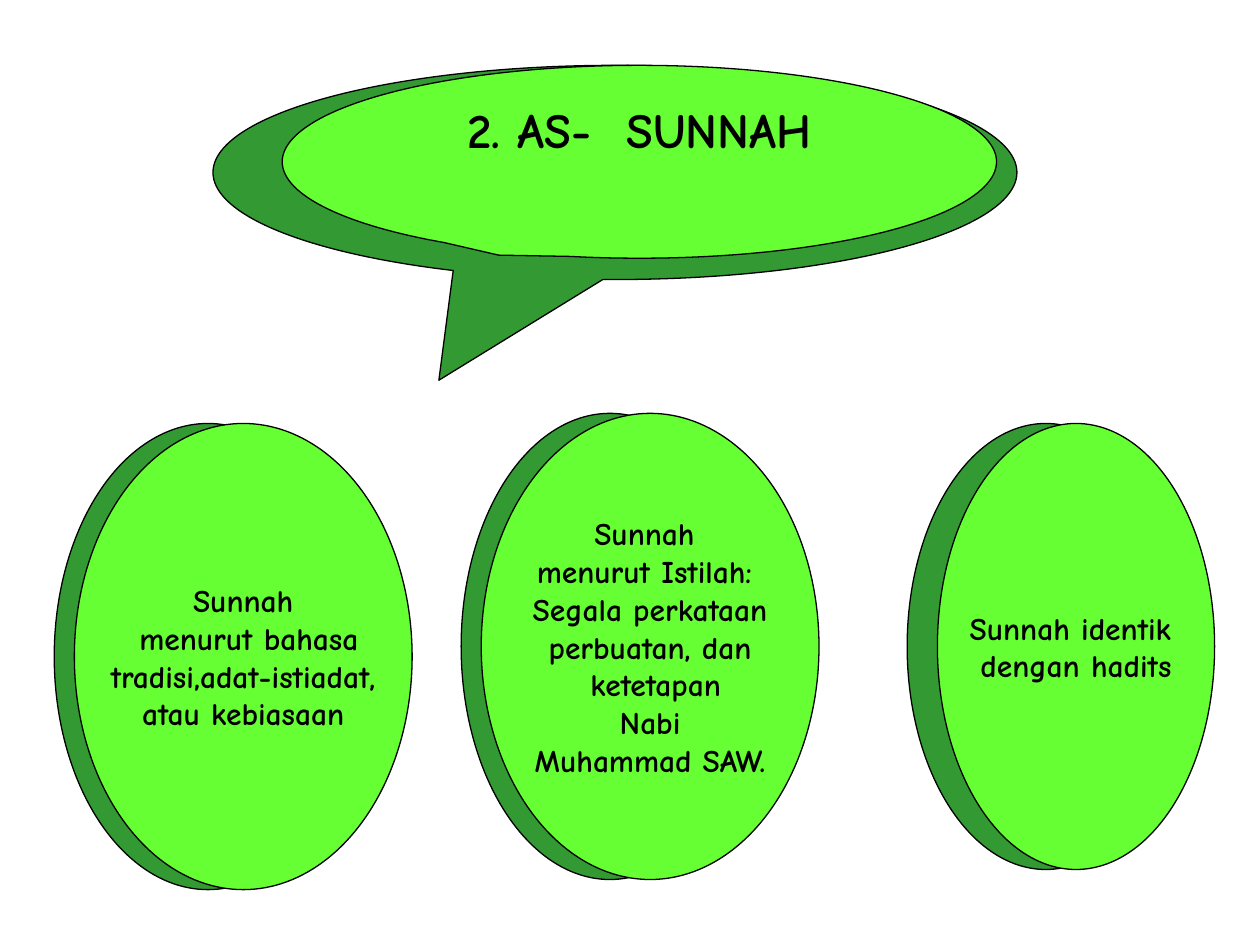
from pptx import Presentation
from pptx.dml.color import RGBColor as Color
from pptx.enum.shapes import MSO_SHAPE as Shape
from pptx.enum.text import MSO_ANCHOR as Anchor, PP_ALIGN as Align
from pptx.util import Pt

COLORS = {"shade": "339933", "face": "66FF33", "ink": "000000"}
FONT = "Comic Neue"

# Left, top, height, shade width, face offset, face width, lines
DEFINITIONS = [
    (31, 242, 266.4, 175.7, 11.5, 193,
     ["Sunnah", " menurut bahasa", " tradisi,adat-istiadat, ", "atau kebiasaan"]),
    (263.5, 236.2, 266.4, 170, 11.5, 193,
     ["Sunnah ", "menurut Istilah: ", "Segala perkataan", "perbuatan, dan",
      " ketetapan", " Nabi ", "Muhammad SAW."]),
    (518.4, 242, 254.9, 158.4, 17.3, 158.4,
     ["Sunnah identik ", "dengan hadits"]),
]


def add_outline(page, kind, left, top, width, height, fill, adjustments=()):
    shape = page.shapes.add_shape(kind, Pt(left), Pt(top), Pt(width), Pt(height))
    shape.shadow.inherit = False
    for index, value in enumerate(adjustments):
        shape.adjustments[index] = value
    shape.fill.solid()
    shape.fill.fore_color.rgb = Color.from_string(COLORS[fill])
    shape.line.color.rgb = Color.from_string(COLORS["ink"])
    shape.line.width = Pt(0.75)
    return shape


def write_text(shape, lines, size=18, anchor=Anchor.MIDDLE, wrap=False):
    box = shape.text_frame
    box.word_wrap = wrap
    box.vertical_anchor = anchor
    for index, line in enumerate(lines):
        para = box.paragraphs[0] if index == 0 else box.add_paragraph()
        para.alignment = Align.CENTER
        span = para.add_run()
        span.text = line
        span.font.name = FONT
        span.font.size = Pt(size)
        span.font.bold = True
        span.font.color.rgb = Color.from_string(COLORS["ink"])


def add_title(page):
    callout = Shape.OVAL_CALLOUT
    add_outline(page, callout, 121.7, 37.4, 459.4, 122.4, "shade", (-0.219, 0.97))
    face = add_outline(page, callout, 161.3, 37.4, 408.2, 110.2, "face", (-0.197, 0.484))
    write_text(face, ["2. AS-  SUNNAH"], size=28, anchor=Anchor.TOP, wrap=True)


def add_definition(page, left, top, height, shade_width, offset, face_width, lines):
    add_outline(page, Shape.OVAL, left, top, shade_width, height, "shade")
    face = add_outline(page, Shape.OVAL, left + offset, top, face_width, height, "face")
    write_text(face, lines)


def main():
    deck = Presentation()
    deck.slide_width, deck.slide_height = Pt(720), Pt(540)
    page = deck.slides.add_slide(deck.slide_layouts[6])

    # Title callout
    add_title(page)

    # Three definitions
    for definition in DEFINITIONS:
        add_definition(page, *definition)

    deck.save("out.pptx")


if __name__ == "__main__":
    main()
